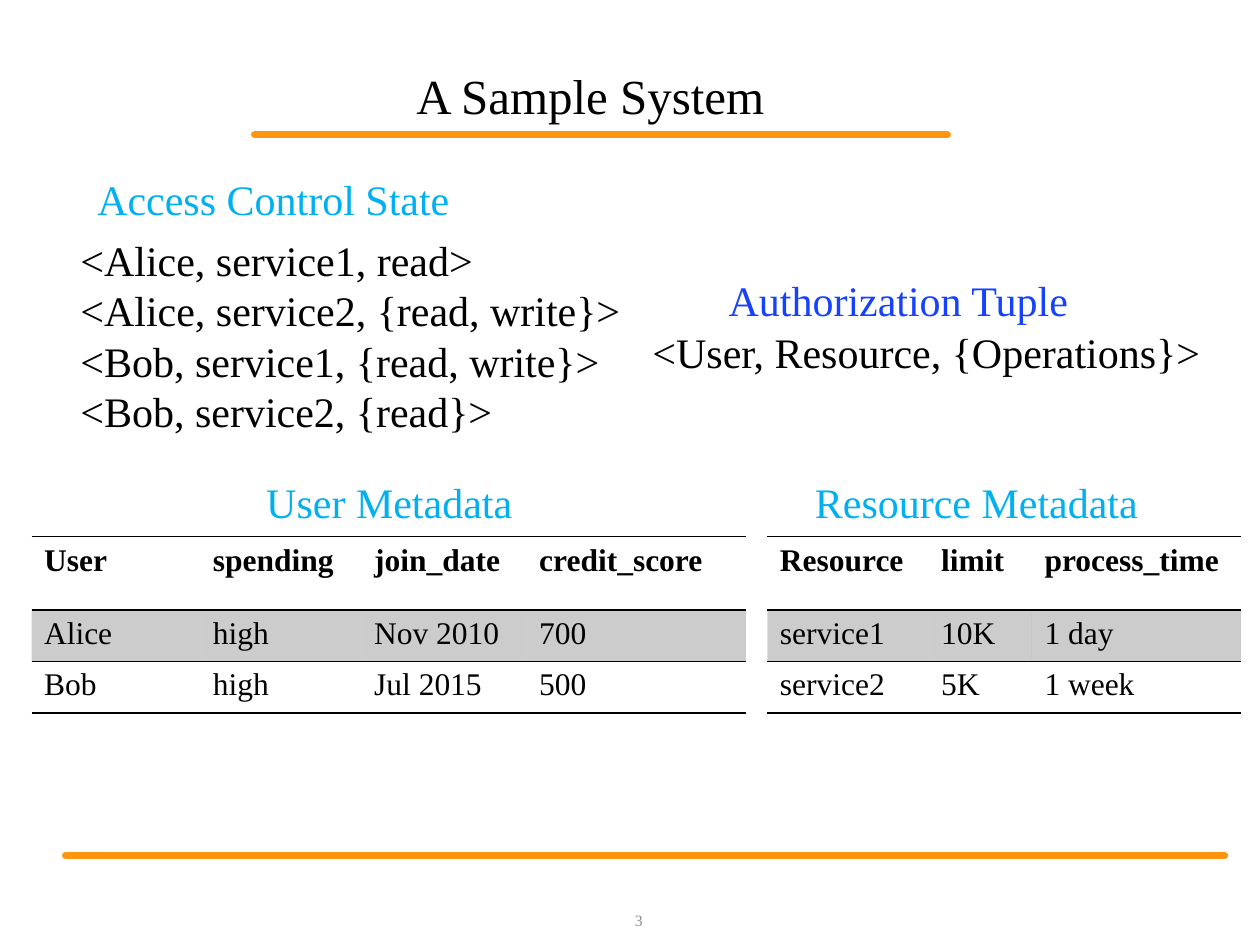
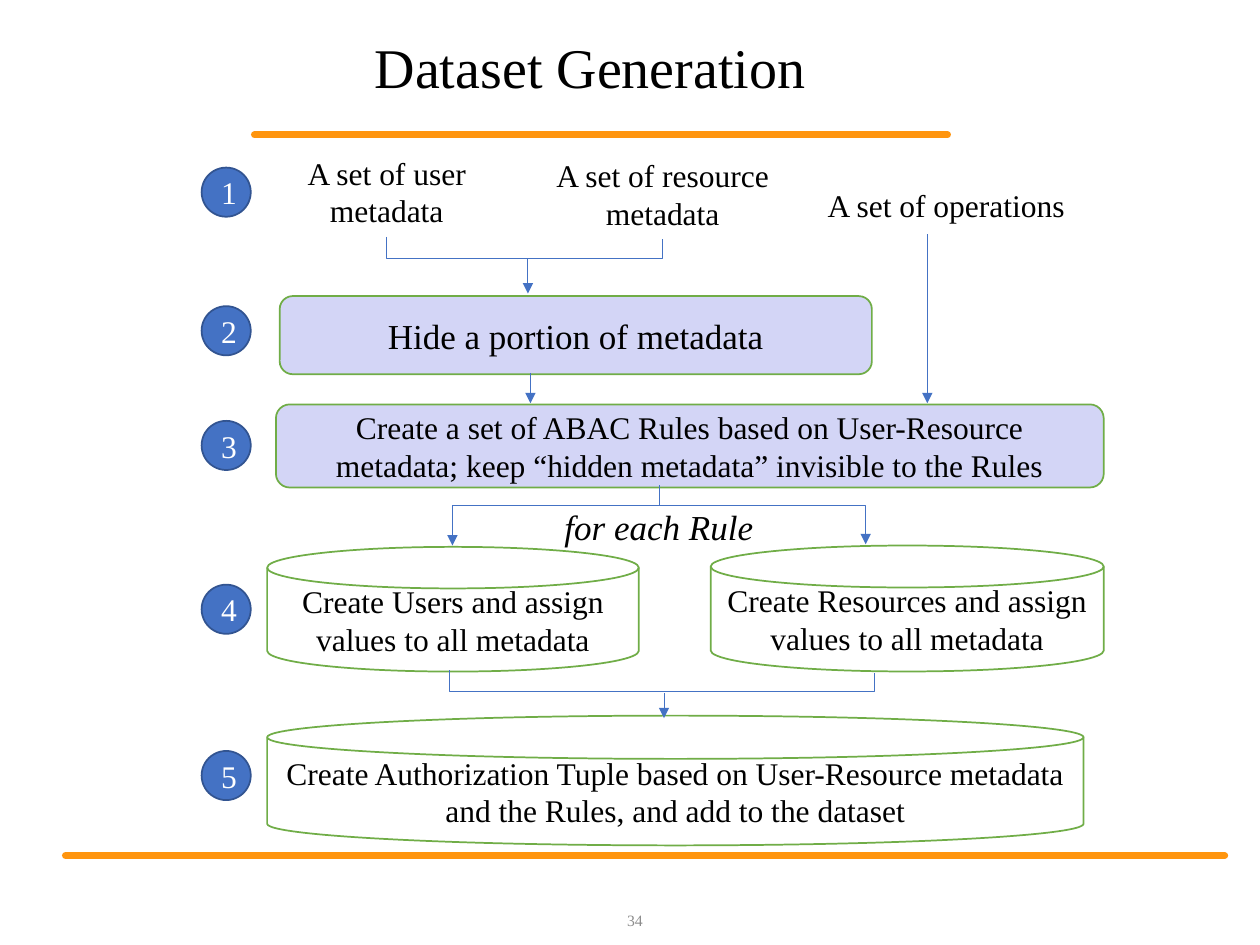
from typing import NamedTuple

from lxml import etree
from pptx import Presentation
from pptx.dml.color import RGBColor
from pptx.enum import shapes, text
from pptx.oxml.ns import qn
from pptx.util import Inches, Pt

FONT = "Times New Roman"
BLACK = RGBColor(0x00, 0x00, 0x00)
WHITE = RGBColor(0xFF, 0xFF, 0xFF)
GREY = RGBColor(0x8C, 0x8C, 0x8C)
ORANGE = RGBColor(0xFF, 0x95, 0x0E)
SKY = RGBColor(0x00, 0xB0, 0xF0)
ROYAL = RGBColor(0x15, 0x41, 0xFF)
INDIGO = RGBColor(0x25, 0x2F, 0xD4)
GREEN = RGBColor(0x70, 0xAD, 0x47)
BLUE = RGBColor(0x44, 0x72, 0xC4)
NAVY = RGBColor(0x32, 0x54, 0x91)

LEFT, CENTER, RIGHT = text.PP_ALIGN.LEFT, text.PP_ALIGN.CENTER, text.PP_ALIGN.RIGHT
TOP, MIDDLE, BOTTOM = text.MSO_ANCHOR.TOP, text.MSO_ANCHOR.MIDDLE, text.MSO_ANCHOR.BOTTOM
ROUNDED = shapes.MSO_SHAPE.ROUNDED_RECTANGLE
DISK = shapes.MSO_SHAPE.FLOWCHART_MAGNETIC_DISK
CIRCLE = shapes.MSO_SHAPE.OVAL
STRAIGHT, ELBOW = shapes.MSO_CONNECTOR.STRAIGHT, shapes.MSO_CONNECTOR.ELBOW
PLAIN_TABLE = "{2D5ABB26-0587-4C30-8999-92F81FD0307C}"


class Box(NamedTuple):
    left: float
    top: float
    width: float
    height: float

    def inches(self) -> list:
        return [Inches(value) for value in self]


class Label(NamedTuple):
    words: str
    box: Box
    size: int = 24
    color: RGBColor = BLACK
    align: int = CENTER
    italic: bool = False


class Step(NamedTuple):
    words: str
    outline: int
    box: Box
    fill: RGBColor = WHITE
    line: RGBColor = GREEN
    opacity: int = 100
    size: int = 18
    color: RGBColor = BLACK


class Line(NamedTuple):
    x1: float
    y1: float
    x2: float
    y2: float
    arrow: bool = True


class Bracket(NamedTuple):
    """Two vertical arms, left one first, joined by a horizontal rail."""
    x1: float
    y1: float
    x2: float
    y2: float
    rail: float
    arrows: bool = False


class Metadata(NamedTuple):
    box: Box
    widths: list
    rows: list


def write(frame, words: str, *, size=18, color=BLACK, bold=False, italic=False,
          align=LEFT, anchor=TOP, spacing=None) -> None:
    frame.word_wrap = True
    frame.vertical_anchor = anchor
    frame.text = words
    for paragraph in frame.paragraphs:
        paragraph.alignment = align
        if spacing:
            paragraph.line_spacing = spacing
        for run in paragraph.runs:
            font = run.font
            font.name, font.size, font.bold, font.italic = FONT, Pt(size), bold, italic
            font.color.rgb = color


def paint(fill, color: RGBColor, opacity: int = 100) -> None:
    fill.solid()
    fill.fore_color.rgb = color
    if opacity < 100:
        rgb = fill._xPr.find(qn("a:solidFill"))[0]
        etree.SubElement(rgb, qn("a:alpha"), val=str(opacity * 1000))


def add_label(slide, label: Label, anchor=TOP) -> None:
    frame = slide.shapes.add_textbox(*label.box.inches()).text_frame
    write(frame, label.words, size=label.size, color=label.color,
          align=label.align, italic=label.italic, anchor=anchor)


def add_step(slide, step: Step) -> None:
    shape = slide.shapes.add_shape(step.outline, *step.box.inches())
    shape.shadow.inherit = False
    paint(shape.fill, step.fill, step.opacity)
    shape.line.color.rgb = step.line
    shape.line.width = Pt(1)
    write(shape.text_frame, step.words, size=step.size, color=step.color,
          align=CENTER, anchor=MIDDLE)


def connect(slide, kind, ends, *, color=BLUE, width=0.5, heads=(), cap=None):
    connector = slide.shapes.add_connector(kind, *[Inches(end) for end in ends])
    connector.line.color.rgb = color
    connector.line.width = Pt(width)
    stroke = connector.line._get_or_add_ln()
    if cap:
        stroke.set("cap", cap)
    for head in heads:
        etree.SubElement(stroke, qn(f"a:{head}"), type="triangle")
    etree.SubElement(connector._element.spPr, qn("a:effectLst"))
    return connector


def add_line(slide, line: Line) -> None:
    connect(slide, STRAIGHT, line[:4], heads=["tailEnd"] if line.arrow else [])


def add_bracket(slide, bracket: Bracket) -> None:
    """Turn an elbow connector on its side so that its arms are vertical."""
    x1, y1, x2, y2, rail, arrows = bracket
    across, down = abs(y2 - y1), x2 - x1
    left = (x1 + x2 - across) / 2
    top = (y1 + y2 - down) / 2
    start, end = (top, top + down) if y2 > y1 else (top + down, top)
    elbow = connect(slide, ELBOW, (left + across, start, left, end),
                    heads=["headEnd", "tailEnd"] if arrows else [])
    properties = elbow._element.spPr
    properties.xfrm.set("rot", str((270 if y2 > y1 else 90) * 60000))
    guides = properties.find(qn("a:prstGeom")).get_or_add_avLst()
    bend = round((rail - y1) / (y2 - y1) * 100000)
    etree.SubElement(guides, qn("a:gd"), name="adj1", fmla=f"val {bend}")


def rule_cell(cell, sides: list) -> None:
    """Draw thin black borders on the given sides; call before filling."""
    properties = cell._tc.get_or_add_tcPr()
    for side in sides:
        border = etree.SubElement(properties, qn(f"a:{side}"), w=str(Pt(1)))
        color = etree.SubElement(border, qn("a:solidFill"))
        etree.SubElement(color, qn("a:srgbClr"), val=str(BLACK))


def add_metadata(slide, metadata: Metadata) -> None:
    table = slide.shapes.add_table(len(metadata.rows), len(metadata.widths),
                                   *metadata.box.inches()).table
    table._tbl.tblPr.find(qn("a:tableStyleId")).text = PLAIN_TABLE
    table.horz_banding = False
    for column, width in zip(table.columns, metadata.widths):
        column.width = Inches(width)
    borders = [["lnT", "lnB"], ["lnT"], ["lnB"]]
    for r, (row, height) in enumerate(zip(table.rows, (0.58, 0.41, 0.41))):
        row.height = Inches(height)
        for cell, words in zip(row.cells, metadata.rows[r]):
            write(cell.text_frame, words, bold=r == 0)
            rule_cell(cell, borders[r])
            if r == 1:
                paint(cell.fill, BLACK, 20)
            else:
                cell.fill.background()


def add_slide(deck, title: str, number: str, *, top: float, size: int):
    slide = deck.slides.add_slide(deck.slide_layouts.get_by_name("Title Only"))
    for ends in ((2.02, 1.07, 7.52, 1.07), (0.52, 6.79, 9.72, 6.79)):
        connect(slide, STRAIGHT, ends, color=ORANGE, width=4, cap="rnd")
    heading = slide.shapes.title
    heading.left, heading.top, heading.width, heading.height = Box(1.99, top, 5.39, 0.51).inches()
    heading.text_frame.auto_size = text.MSO_AUTO_SIZE.NONE
    write(heading.text_frame, title, size=size, align=CENTER, anchor=BOTTOM, spacing=0.9)
    add_label(slide, Label(number, Box(4.8, 7.1, 0.4, 0.4), 9, GREY, RIGHT), MIDDLE)
    return slide


SYSTEM_LABELS = [
    Label("Access Control State", Box(-0.16, 1.33, 4.66, 0.5), color=SKY),
    Label("<Alice, service1, read>\n<Alice, service2, {read, write}>\n"
          "<Bob, service1, {read, write}>\n<Bob, service2, {read}>",
          Box(0.54, 1.81, 4.66, 1.72), align=LEFT),
    Label("User Metadata", Box(0.76, 3.73, 4.66, 0.5), color=SKY),
    Label("Resource Metadata", Box(5.42, 3.73, 4.66, 0.5), color=SKY),
    Label("<User, Resource, {Operations}>", Box(5.08, 2.54, 4.66, 0.5), align=LEFT),
    Label("Authorization Tuple", Box(4.8, 2.13, 4.66, 0.5), color=ROYAL),
]
SYSTEM_TABLES = [
    Metadata(Box(0.25, 4.26, 5.67, 1.4), [1.34, 1.28, 1.31, 1.74],
             [["User", "spending", "join_date", "credit_score"],
              ["Alice", "high", "Nov 2010", "700"],
              ["Bob", "high", "Jul 2015", "500"]]),
    Metadata(Box(6.09, 4.26, 3.76, 1.4), [1.28, 0.82, 1.66],
             [["Resource", "limit", "process_time"],
              ["service1", "10K", "1 day"],
              ["service2", "5K", "1 week"]]),
]

STEPS = [
    Step("Hide a portion of metadata", ROUNDED, Box(2.22, 2.35, 4.7, 0.62),
         INDIGO, opacity=20, size=20),
    Step("Create a set of ABAC Rules based on User-Resource metadata; "
         "keep “hidden metadata” invisible to the Rules",
         ROUNDED, Box(2.19, 3.21, 6.57, 0.66), INDIGO, opacity=20),
    Step("Create Users and assign values to all metadata", DISK, Box(2.12, 4.34, 2.95, 0.99)),
    Step("Create Resources and assign values to all metadata",
         DISK, Box(5.64, 4.33, 3.12, 1)),
    Step("Create Authorization Tuple based on User-Resource metadata "
         "and the Rules, and add to the dataset", DISK, Box(2.12, 5.68, 6.48, 1.03)),
]
BADGE_TOPS = [1.33, 2.43, 3.34, 4.64, 5.96]
INPUTS = [
    Label("A set of user metadata", Box(2, 1.17, 2.14, 0.71), 18),
    Label("A set of resource metadata", Box(4.19, 1.19, 2.14, 0.71), 18),
    Label("A set of operations", Box(6.44, 1.43, 2.14, 0.4), 18),
    Label("for each Rule", Box(4.16, 3.96, 2.14, 0.44), 20, italic=True),
]
BRACKETS = [
    Bracket(3.07, 1.88, 5.26, 1.9, rail=2.05),
    Bracket(3.59, 4.33, 6.87, 4.32, rail=4.01, arrows=True),
    Bracket(3.57, 5.32, 6.94, 5.34, rail=5.49),
]
LINES = [
    Line(4.19, 2.05, 4.19, 2.33),
    Line(4.21, 2.96, 4.21, 3.2),
    Line(7.36, 1.86, 7.36, 3.2),
    Line(5.23, 4.01, 5.23, 3.85, arrow=False),
    Line(5.27, 5.5, 5.27, 5.7),
]


def build_sample_system(deck) -> None:
    slide = add_slide(deck, "A Sample System", "3", top=0.53, size=28)
    for label in SYSTEM_LABELS:
        add_label(slide, label)
    for metadata in SYSTEM_TABLES:
        add_metadata(slide, metadata)


def build_dataset_generation(deck) -> None:
    slide = add_slide(deck, "Dataset Generation", "34", top=0.34, size=32)
    for step in STEPS:
        add_step(slide, step)
    for number, top in enumerate(BADGE_TOPS, 1):
        add_step(slide, Step(str(number), CIRCLE, Box(1.6, top, 0.39, 0.39),
                             BLUE, NAVY, color=WHITE))
    for label in INPUTS:
        add_label(slide, label)
    for bracket in BRACKETS:
        add_bracket(slide, bracket)
    for line in LINES:
        add_line(slide, line)


def main() -> None:
    deck = Presentation()
    deck.slide_width, deck.slide_height = Inches(10), Inches(7.5)
    build_sample_system(deck)
    build_dataset_generation(deck)
    deck.save("out.pptx")


if __name__ == "__main__":
    main()
